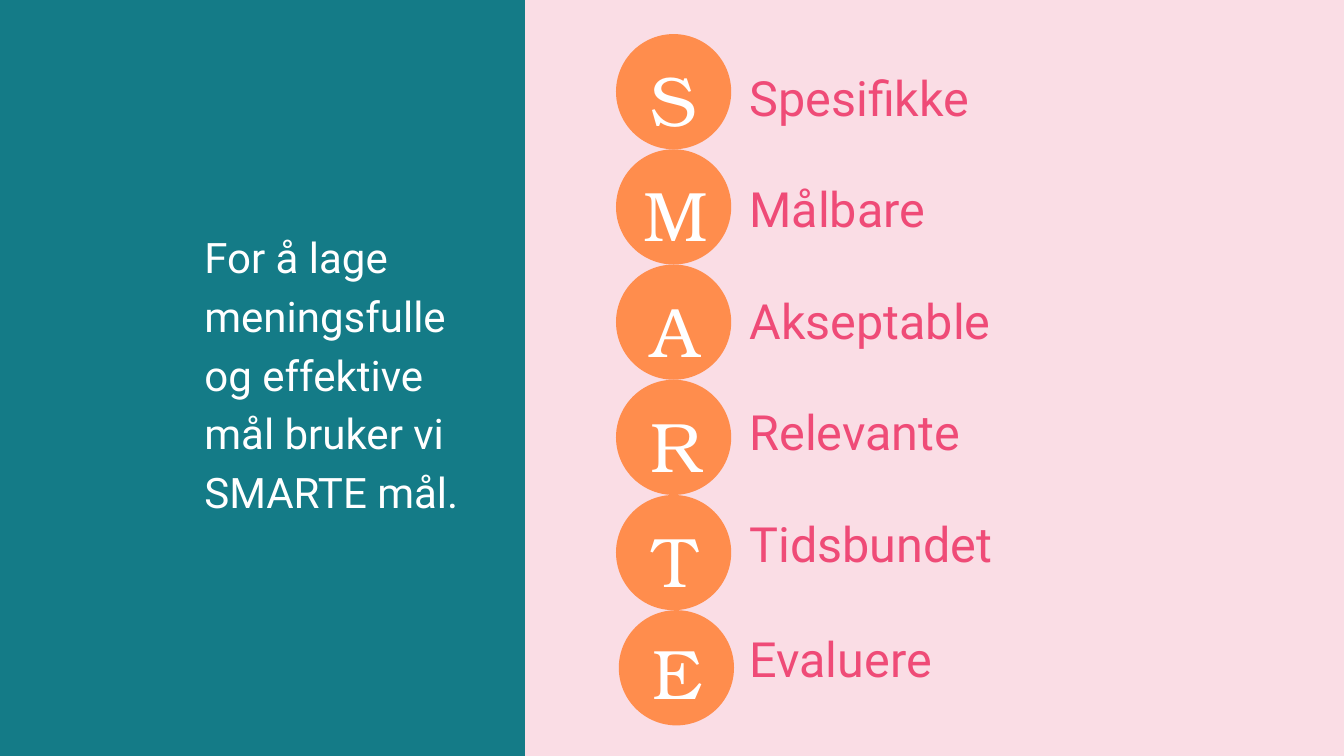
import pptx
import pptx.util
import pptx.dml.color
import pptx.enum.shapes
import pptx.enum.text
import pptx.oxml

Pt = pptx.util.Pt
RGB = pptx.dml.color.RGBColor
Shape = pptx.enum.shapes.MSO_SHAPE
Text = pptx.enum.text

TEAL = RGB(0x14, 0x7B, 0x87)
PINK = RGB(0xFA, 0xDD, 0xE5)
ROSE = RGB(0xEF, 0x4B, 0x77)
CORAL = RGB(0xFF, 0x8D, 0x4D)
WHITE = RGB(0xFF, 0xFF, 0xFF)

CLAIM = "For å lage meningsfulle og effektive mål bruker vi SMARTE mål."
# letter, word, circle left, left inset, bottom inset, gap before word
GOALS = [
    ("S", "Spesifikke", 660, 0, 0, 0),
    ("M", "Målbare", 660, 3.6, 0, 46.7),
    ("A", "Akseptable", 660, 3.6, 0, 46.7),
    ("R", "Relevante", 660, 3.6, 0, 46.7),
    ("T", "Tidsbundet", 660, 3.6, 0, 46.7),
    ("E", "Evaluere", 663, 3.6, 7.2, 50.3),
]
TOP, SIZE = 36.5, 123.45


def place(shape, x, y, w, h):
    shape.left, shape.top, shape.width, shape.height = map(Pt, (x, y, w, h))


def frame(shape, anchor, left=0, low=0):
    box = shape.text_frame
    box.word_wrap = True
    box.auto_size = Text.MSO_AUTO_SIZE.NONE
    box.vertical_anchor = anchor
    box.margin_top = box.margin_right = 0
    box.margin_left, box.margin_bottom = Pt(left), Pt(low)
    return box


def style(para, text, face, size, color, pitch, align):
    para.text = text
    para.alignment = align
    para.line_spacing = Pt(pitch)
    para.space_before = para.space_after = Pt(0)
    para.font.name = face
    para.font.size = Pt(size)
    para.font.color.rgb = color


def solid(slide, kind, color, *area):
    shape = slide.shapes.add_shape(kind, *map(Pt, area))
    shape.fill.solid()
    shape.fill.fore_color.rgb = color
    shape.line.fill.background()
    shape.shadow.inherit = False
    return shape


def main():
    deck = pptx.Presentation()
    deck.slide_width, deck.slide_height = Pt(1440), Pt(810)
    slide = deck.slides.add_slide(deck.slide_layouts[1])
    slide.background.fill.solid()
    slide.background.fill.fore_color.rgb = PINK

    panel = solid(slide, Shape.RECTANGLE, TEAL, 0, 0, 562.5, 810)
    slide.shapes.element.insert(2, panel.element)

    title = slide.shapes.title
    place(title, 219, 239, 317.5, 315)
    box = frame(title, Text.MSO_ANCHOR.TOP)
    style(box.paragraphs[0], CLAIM, "Roboto", 45, WHITE, 63, Text.PP_ALIGN.LEFT)

    body = slide.placeholders[1]
    place(body, 803, 62, 311, 675)
    words = frame(body, Text.MSO_ANCHOR.TOP)

    for i, (letter, word, x, left, low, gap) in enumerate(GOALS):
        disc = solid(slide, Shape.OVAL, CORAL, x, TOP + i * SIZE, SIZE, SIZE)
        box = frame(disc, Text.MSO_ANCHOR.MIDDLE, left, low)
        style(box.paragraphs[0], letter, "TeX Gyre Bonum", 75, WHITE, 105,
              Text.PP_ALIGN.CENTER)

        para = words.add_paragraph() if i else words.paragraphs[0]
        style(para, word, "Roboto", 52, ROSE, 72.8, Text.PP_ALIGN.LEFT)
        para.space_before = Pt(gap)
        props = para._p.get_or_add_pPr()
        props.set("marL", "0")
        props.set("indent", "0")
        props.append(pptx.oxml.parse_xml(
            '<a:buNone xmlns:a="http://schemas.openxmlformats.org/drawingml/2006/main"/>'))
        props.append(props.find(pptx.oxml.ns.qn("a:defRPr")))

    deck.save("out.pptx")


if __name__ == "__main__":
    main()
